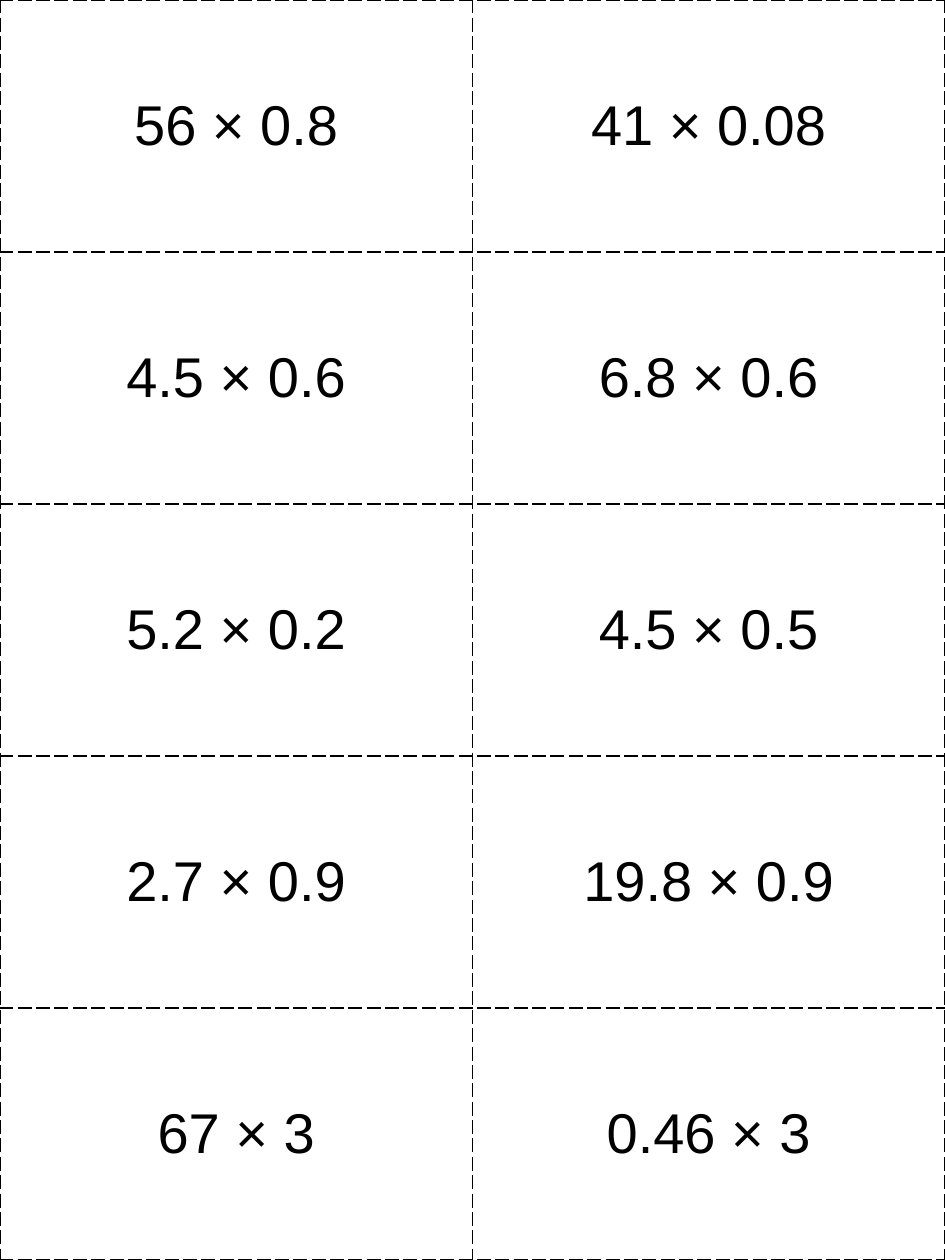
from lxml import etree
from pptx import Presentation
from pptx.dml.color import RGBColor
from pptx.enum.text import MSO_ANCHOR, PP_ALIGN
from pptx.oxml.ns import qn
from pptx.util import Pt

CENTER = PP_ALIGN.CENTER
MIDDLE = MSO_ANCHOR.MIDDLE
PAGE_WIDTH, PAGE_HEIGHT = 540, 720
PROBLEMS = [
    ("56 × 0.8", "41 × 0.08"),
    ("4.5 × 0.6", "6.8 × 0.6"),
    ("5.2 × 0.2", "4.5 × 0.5"),
    ("2.7 × 0.9", "19.8 × 0.9"),
    ("67 × 3", "0.46 × 3"),
]


def color(value):
    return RGBColor.from_string(value)


def write(para, text, font, size, ink, align):
    para.alignment = align
    span = para.add_run()
    span.text = text
    span.font.name = font
    span.font.size = Pt(size)
    span.font.color.rgb = color(ink)


class CardSheet:
    font = "Arial"
    size = 32
    ink = "000000"
    paper = "FFFFFF"
    line_width = 1
    dash = "lgDash"

    def __init__(self, page):
        self.page = page

    def borders(self, cell):
        properties = cell._tc.get_or_add_tcPr()
        for side in ("lnL", "lnR", "lnT", "lnB"):
            line = etree.SubElement(properties, qn(f"a:{side}"), w=str(Pt(self.line_width)))
            fill = etree.SubElement(line, qn("a:solidFill"))
            etree.SubElement(fill, qn("a:srgbClr"), val=self.ink)
            etree.SubElement(line, qn("a:prstDash"), val=self.dash)

    def card(self, cell, text):
        self.borders(cell)
        cell.fill.solid()
        cell.fill.fore_color.rgb = color(self.paper)
        cell.vertical_anchor = MIDDLE
        write(cell.text_frame.paragraphs[0], text, font=self.font,
              size=self.size, ink=self.ink, align=CENTER)

    def grid(self, rows, left, top, width, height):
        frame = self.page.shapes.add_table(
            len(rows), len(rows[0]), Pt(left), Pt(top), Pt(width), Pt(height))
        table = frame.table
        table.first_row = False
        table.horz_banding = False
        for row, texts in enumerate(rows):
            for column, text in enumerate(texts):
                self.card(table.cell(row, column), text)


def main():
    deck = Presentation()
    deck.slide_width = Pt(PAGE_WIDTH)
    deck.slide_height = Pt(PAGE_HEIGHT)
    sheet = CardSheet(deck.slides.add_slide(deck.slide_layouts[6]))
    sheet.grid(PROBLEMS, left=0, top=0, width=PAGE_WIDTH, height=PAGE_HEIGHT)
    deck.save("out.pptx")


if __name__ == "__main__":
    main()
